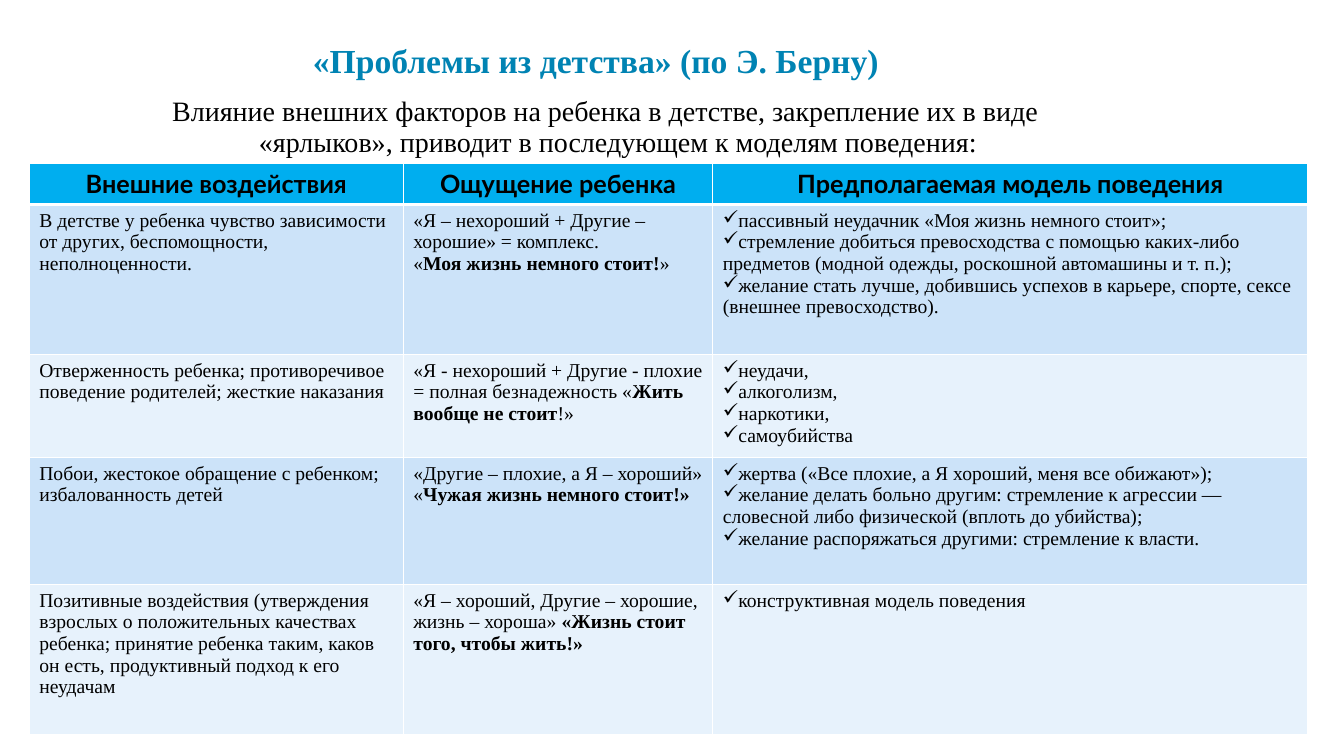
from lxml import etree
from pptx import Presentation
from pptx.dml.color import RGBColor
from pptx.enum.text import MSO_ANCHOR, MSO_AUTO_SIZE, PP_ALIGN
from pptx.oxml.ns import qn
from pptx.util import Inches, Pt

CENTER, LEFT = PP_ALIGN.CENTER, PP_ALIGN.LEFT
TOP, BOTTOM = MSO_ANCHOR.TOP, MSO_ANCHOR.BOTTOM
BLACK = RGBColor(0x00, 0x00, 0x00)
TEAL = RGBColor(0x00, 0x83, 0xB3)
HEADER_BLUE = RGBColor(0x00, 0xAE, 0xEF)
BANDS = (RGBColor(0xCC, 0xE3, 0xF9), RGBColor(0xE7, 0xF2, 0xFC))
BORDER = "FFFFFF"
SERIF = "Times New Roman"

TITLE = "«Проблемы из детства» (по Э. Берну)"
INTRO = ("Влияние внешних факторов на ребенка в детстве, закрепление их в виде "
         "«ярлыков», приводит в последующем к моделям поведения:")
HEADERS = ("Внешние воздействия", "Ощущение ребенка", "Предполагаемая модель поведения")
BOLD_MARK = "**"
ROWS = [
    (["В детстве у ребенка чувство зависимости от других, беспомощности, неполноценности."],
     ["«Я – нехороший + Другие – хорошие» = комплекс.",
      "«**Моя жизнь немного стоит!**»"],
     ["пассивный неудачник «Моя жизнь немного стоит»;",
      "стремление добиться превосходства с помощью каких-либо предметов "
      "(модной одежды, роскошной автомашины и т. п.);",
      "желание стать лучше, добившись успехов в карьере, спорте, сексе "
      "(внешнее превосходство)."]),
    (["Отверженность ребенка; противоречивое поведение родителей; жесткие наказания"],
     ["«Я - нехороший + Другие - плохие = полная безнадежность «**Жить вообще не стоит**!»"],
     ["неудачи,", "алкоголизм,", "наркотики,", "самоубийства"]),
    (["Побои, жестокое обращение с ребенком; избалованность детей"],
     ["«Другие – плохие, а Я – хороший»",
      "«**Чужая жизнь немного стоит!»**"],
     ["жертва («Все плохие, а Я хороший, меня все обижают»);",
      "желание делать больно другим: стремление к агрессии — словесной "
      "либо физической (вплоть до убийства);",
      "желание распоряжаться другими: стремление к власти."]),
    (["Позитивные воздействия (утверждения взрослых о положительных качествах ребенка; "
      "принятие ребенка таким, каков он есть, продуктивный подход к его неудачам"],
     ["«Я – хороший, Другие – хорошие, жизнь – хороша» **«Жизнь стоит того, чтобы жить!»**"],
     ["конструктивная модель поведения"]),
]

COL_WIDTHS = (3.71, 3.07, 5.9)
ROW_HEIGHTS = (0.41, 1.49, 1.02, 1.26, 1.49)
TABLE_AT = (0.29, 1.62)
MODEL_COL = 2

TITLE_FONT = {"name": SERIF, "size": Pt(24), "bold": True}
INTRO_FONT = {"name": SERIF, "size": Pt(20), "bold": False}
HEADER_FONT = {"name": "Lato", "size": Pt(18), "bold": True}
CELL_FONT = {"name": SERIF, "size": Pt(14), "bold": False}


def set_font(font, style, color=BLACK):
    for key, value in style.items():
        setattr(font, key, value)
    font.color.rgb = color


def fill_placeholder(sp, box, text, style, color, anchor, spacing):
    sp.left, sp.top, sp.width, sp.height = (Inches(v) for v in box)
    tf = sp.text_frame
    tf.word_wrap, tf.auto_size, tf.vertical_anchor = True, MSO_AUTO_SIZE.NONE, anchor
    p = tf.paragraphs[0]
    p.alignment, p.line_spacing, p.space_before = CENTER, spacing, Pt(0)
    r = p.add_run()
    r.text = text
    set_font(r.font, style, color)
    return p


def write_cell(cell, lines, style, align, bulleted):
    tf = cell.text_frame
    for i, line in enumerate(lines):
        p = tf.add_paragraph() if i else tf.paragraphs[0]
        p.alignment = align
        if bulleted:
            etree.SubElement(p._p.get_or_add_pPr(), qn("a:buChar"), char="✓")
        for j, part in enumerate(line.split(BOLD_MARK)):
            if part:
                r = p.add_run()
                r.text = part
                set_font(r.font, style)
                r.font.bold = style["bold"] or j % 2 == 1


def paint_cell(cell, color, top, bottom):
    tcPr = cell._tc.get_or_add_tcPr()
    for side, width in (("L", 1), ("R", 1), ("T", top), ("B", bottom)):
        ln = etree.SubElement(tcPr, qn("a:ln" + side), w=str(Pt(width)))
        fill = etree.SubElement(ln, qn("a:solidFill"))
        etree.SubElement(fill, qn("a:srgbClr"), val=BORDER)
    cell.fill.solid()
    cell.fill.fore_color.rgb = color


def main():
    prs = Presentation()
    prs.slide_width, prs.slide_height = Inches(13.33), Inches(7.5)
    s = prs.slides.add_slide(prs.slide_layouts[1])
    fill_placeholder(s.shapes.title, (1.16, 0.29, 9.5, 0.55), TITLE,
                     TITLE_FONT, TEAL, BOTTOM, 0.8)
    p = fill_placeholder(s.placeholders[1], (1.23, 0.92, 9.5, 0.71), INTRO,
                         INTRO_FONT, BLACK, TOP, 0.9)
    pPr = p._p.get_or_add_pPr()
    pPr.set("marL", str(Inches(0.3)))
    pPr.set("indent", str(Inches(-0.25)))
    etree.SubElement(pPr, qn("a:buNone"))

    size = (sum(COL_WIDTHS), sum(ROW_HEIGHTS))
    table = s.shapes.add_table(len(ROW_HEIGHTS), len(COL_WIDTHS),
                               *(Inches(v) for v in TABLE_AT + size)).table
    for column, width in zip(table.columns, COL_WIDTHS):
        column.width = Inches(width)
    for row, height in zip(table.rows, ROW_HEIGHTS):
        row.height = Inches(height)

    for c, header in enumerate(HEADERS):
        cell = table.cell(0, c)
        write_cell(cell, [header], HEADER_FONT, CENTER, False)
        paint_cell(cell, HEADER_BLUE, 1, 3)
    for n, row in enumerate(ROWS):
        for c, lines in enumerate(row):
            cell = table.cell(n + 1, c)
            write_cell(cell, lines, CELL_FONT, LEFT, c == MODEL_COL)
            paint_cell(cell, BANDS[n % 2], 1 if n else 3, 1)
    prs.save("out.pptx")


if __name__ == "__main__":
    main()
